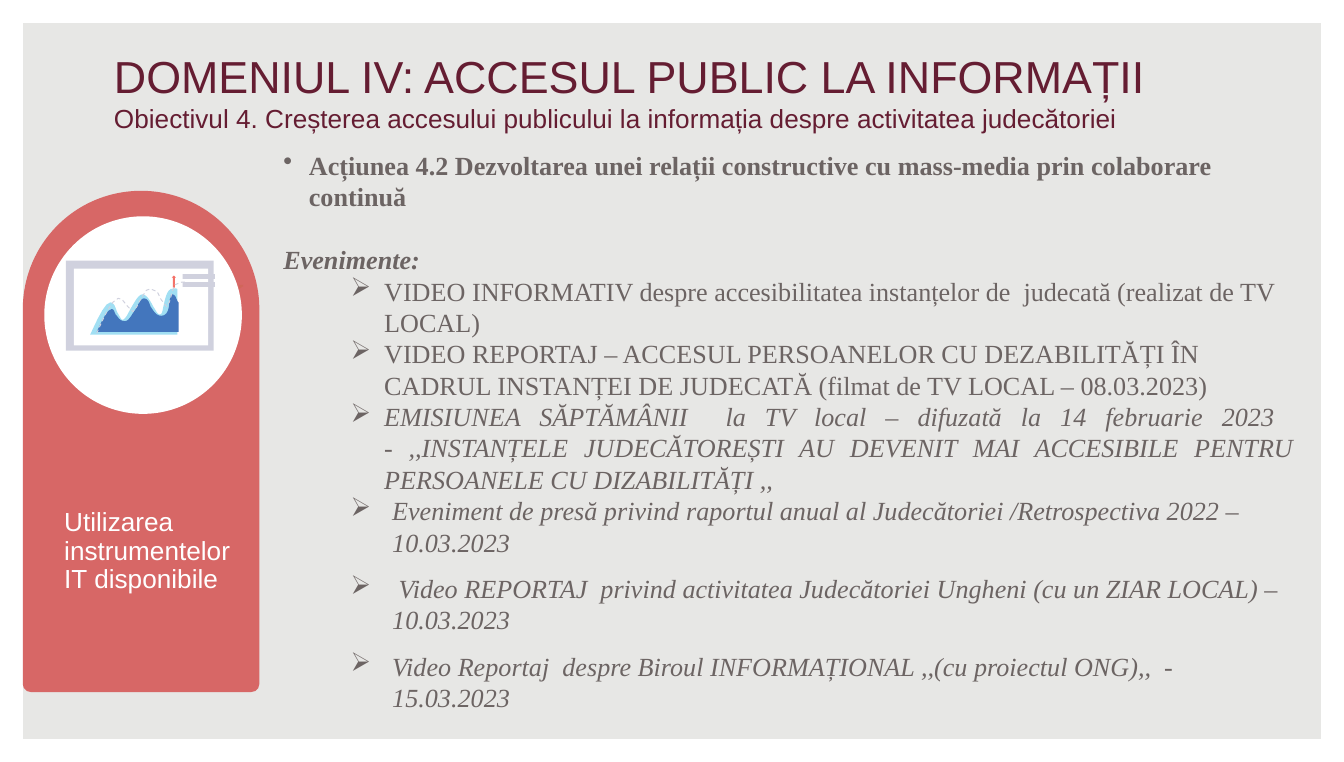
from lxml import etree
from pptx import Presentation
from pptx.dml.color import RGBColor
from pptx.enum import dml, shapes, text
from pptx.oxml import ns
from pptx.util import Inches, Pt

COLORS = {
    "background": "E7E7E5", "white": "FFFFFF", "coral": "D76766", "frame": "D0D1DE",
    "light_wave": "A1DFF3", "dark_wave": "4376BD", "arrow": "F47168", "accent": "D16659",
    "title": "651D32", "body": "6C6463",
}
SHAPE = shapes.MSO_SHAPE

LIGHT_WAVE = ((0.18, 0.55), [
    (0.19, 0.54, 0.28, 0.31, 0.33, 0.31), (0.36, 0.31, 0.37, 0.35, 0.38, 0.38),
    (0.40, 0.41, 0.41, 0.44, 0.42, 0.44), (0.44, 0.44, 0.46, 0.40, 0.48, 0.36),
    (0.51, 0.31, 0.54, 0.25, 0.57, 0.25), (0.60, 0.25, 0.63, 0.30, 0.65, 0.34),
    (0.67, 0.37, 0.68, 0.40, 0.70, 0.40), (0.72, 0.40, 0.72, 0.36, 0.73, 0.32),
    (0.74, 0.28, 0.75, 0.23, 0.78, 0.21), (0.80, 0.21, 0.81, 0.20, 0.83, 0.21),
])
DARK_WAVE = ((0.23, 0.53), [
    (0.24, 0.51, 0.30, 0.36, 0.34, 0.36), (0.36, 0.36, 0.36, 0.38, 0.37, 0.40),
    (0.39, 0.42, 0.40, 0.45, 0.44, 0.45), (0.47, 0.45, 0.49, 0.40, 0.52, 0.36),
    (0.54, 0.32, 0.56, 0.28, 0.58, 0.28), (0.61, 0.28, 0.62, 0.31, 0.63, 0.34),
    (0.65, 0.37, 0.67, 0.41, 0.71, 0.41), (0.76, 0.41, 0.77, 0.35, 0.77, 0.30),
    (0.78, 0.27, 0.78, 0.25, 0.79, 0.25), (0.81, 0.25, 0.82, 0.27, 0.82, 0.28),
    (0.83, 0.29, 0.83, 0.31, 0.84, 0.31),
])
DASHED_TREND = [
    (0.23, 0.54), (0.27, 0.45), (0.31, 0.37), (0.35, 0.31), (0.39, 0.28),
    (0.42, 0.29), (0.46, 0.34), (0.50, 0.38), (0.53, 0.34), (0.56, 0.28),
    (0.60, 0.22), (0.63, 0.21), (0.68, 0.23), (0.71, 0.29), (0.75, 0.34),
    (0.77, 0.31), (0.79, 0.24), (0.81, 0.18), (0.86, 0.16), (0.89, 0.16),
]
EVENTS = [
    ("VIDEO INFORMATIV despre accesibilitatea instanțelor de  judecată (realizat de TV LOCAL)", {}),
    ("VIDEO REPORTAJ – ACCESUL PERSOANELOR CU DEZABILITĂȚI ÎN CADRUL INSTANȚEI DE JUDECATĂ "
     "(filmat de TV LOCAL – 08.03.2023)", {}),
    ("EMISIUNEA SĂPTĂMÂNII  la TV local – difuzată la 14 februarie 2023  - ,,INSTANȚELE "
     "JUDECĂTOREȘTI AU DEVENIT MAI ACCESIBILE PENTRU PERSOANELE CU DIZABILITĂȚI ,,",
     {"italic": True, "align": text.PP_ALIGN.JUSTIFY}),
]
PRESS_EVENTS = [
    "Eveniment de presă privind raportul anual al Judecătoriei /Retrospectiva 2022 – 10.03.2023",
    " Video REPORTAJ  privind activitatea Judecătoriei Ungheni (cu un ZIAR LOCAL) – 10.03.2023",
    "Video Reportaj  despre Biroul INFORMAȚIONAL ,,(cu proiectul ONG),,  - 15.03.2023",
]


def rgb(color):
    return RGBColor.from_string(COLORS[color])


def paint(shape, color):
    shape.shadow.inherit = False
    shape.fill.solid()
    shape.fill.fore_color.rgb = rgb(color)
    shape.line.fill.background()
    return shape


def add_preset(slide, kind, box, color):
    return paint(slide.shapes.add_shape(kind, *map(Inches, box)), color)


def add_outline(slide, origin, points, close=True):
    left, top = origin
    placed = [(Inches(left + x), Inches(top + y)) for x, y in points]
    builder = slide.shapes.build_freeform(*placed[0])
    builder.add_line_segments(placed[1:], close=close)
    return builder.convert_to_shape()


def curve_points(start, curves, steps=6):
    points = [start]
    for x1, y1, x2, y2, x3, y3 in curves:
        x0, y0 = points[-1]
        for step in range(1, steps + 1):
            t = step / steps
            weights = ((1 - t) ** 3, 3 * t * (1 - t) ** 2, 3 * t * t * (1 - t), t ** 3)
            points.append((sum(w * x for w, x in zip(weights, (x0, x1, x2, x3))),
                           sum(w * y for w, y in zip(weights, (y0, y1, y2, y3)))))
    return points


def add_text_frame(slide, box):
    frame = slide.shapes.add_textbox(*map(Inches, box)).text_frame
    frame.word_wrap = True
    return frame


def style(paragraph, font_name, color, size=14, bold=False, italic=False):
    font = paragraph.font
    font.name, font.size, font.bold, font.italic = font_name, Pt(size), bold, italic
    font.color.rgb = rgb(color)


def add_bullet(paragraph, mark, margin, hanging):
    properties = paragraph._p.get_or_add_pPr()
    properties.set("marL", str(Inches(margin)))
    properties.set("indent", str(-Inches(hanging)))
    etree.SubElement(properties, ns.qn("a:buChar")).set("char", mark)


def chart_icon(slide, origin):
    left, top = origin
    add_preset(slide, SHAPE.RECTANGLE, (left, top, 1.1, 0.67), "frame")
    add_preset(slide, SHAPE.RECTANGLE, (left + 0.06, top + 0.06, 1, 0.57), "white")
    for (start, curves), color in ((LIGHT_WAVE, "light_wave"), (DARK_WAVE, "dark_wave")):
        points = curve_points(start, curves)
        points.append((points[-1][0], start[1]))
        paint(add_outline(slide, origin, points), color)
        if color == "light_wave":
            for bar_top in (0.1, 0.16):
                add_preset(slide, SHAPE.RECTANGLE, (left + 0.87, top + bar_top, 0.24, 0.035), "frame")
            add_preset(slide, SHAPE.UP_ARROW, (left + 0.79, top + 0.11, 0.03, 0.09), "arrow")
    trend = add_outline(slide, origin, DASHED_TREND, close=False)
    trend.shadow.inherit = False
    trend.fill.background()
    trend.line.color.rgb = rgb("frame")
    trend.line.width = Pt(0.5)
    trend.line.dash_style = dml.MSO_LINE.DASH


def side_panel(slide, box):
    left, top, width, height = box
    panel = add_preset(slide, SHAPE.ROUND_2_SAME_RECTANGLE, box, "coral")
    panel.adjustments[0], panel.adjustments[1] = 0.5, 0.034
    add_preset(slide, SHAPE.OVAL, (left + 0.16, top + 0.19, 1.47, 1.47), "white")
    chart_icon(slide, (left + 0.32, top + 0.52))
    accent = [(0.03, 0.01), (0.03, 0), (0, 0), (0, 0.03)]
    paint(add_outline(slide, (left + 1.61, top + 0.7), accent), "accent")
    caption = add_text_frame(slide, (left + 0.21, top + 2.32, 1.57, 0.74)).paragraphs[0]
    caption.text = "Utilizarea instrumentelor IT disponibile"
    caption.line_spacing = 0.9
    style(caption, "Arial", "white")


def heading(slide, box):
    title = add_text_frame(slide, box).paragraphs[0]
    style(title, "Arial", "title", 24)
    domain = title.add_run()
    domain.text = "DOMENIUL IV: ACCESUL PUBLIC LA INFORMAȚII"
    title.add_line_break()
    objective = title.add_run()
    objective.text = ("Obiectivul 4. Creșterea accesului publicului la informația "
                      "despre activitatea judecătoriei")
    objective.font.size = Pt(14)


def action_list(slide, box):
    frame = add_text_frame(slide, box)
    action = frame.paragraphs[0]
    action.text = ("Acțiunea 4.2 Dezvoltarea unei relații constructive cu mass-media "
                   "prin colaborare continuă")
    add_bullet(action, "•", 0.19, 0.19)
    style(action, "Times New Roman", "body", bold=True)

    events_label = frame.add_paragraph()
    events_label.text = "Evenimente:"
    events_label.alignment = text.PP_ALIGN.JUSTIFY
    events_label.space_before = Pt(17)
    style(events_label, "Times New Roman", "body", bold=True, italic=True)

    press = [(wording, {"italic": True, "margin": 0.81, "hanging": 0.31, "after": 8})
             for wording in PRESS_EVENTS]
    for wording, look in EVENTS + press:
        event = frame.add_paragraph()
        event.text = wording
        event.level = 1
        event.alignment = look.get("align")
        event.space_after = Pt(look.get("after", 0))
        add_bullet(event, "➢", look.get("margin", 0.75), look.get("hanging", 0.25))
        style(event, "Times New Roman", "body", italic=look.get("italic", False))


def main():
    deck = Presentation()
    deck.slide_width, deck.slide_height = Inches(10), Inches(5.67)
    slide = deck.slides.add_slide(deck.slide_layouts[6])
    slide.background.fill.solid()
    slide.background.fill.fore_color.rgb = rgb("background")
    border = add_preset(slide, SHAPE.FRAME, (0, 0, 10, 5.67), "white")
    border.adjustments[0] = 0.03
    side_panel(slide, (0.17, 1.42, 1.76, 3.73))
    heading(slide, (0.75, 0.31, 8.8, 0.92))
    action_list(slide, (2.01, 1.06, 7.72, 4.61))
    deck.save("out.pptx")


if __name__ == "__main__":
    main()
